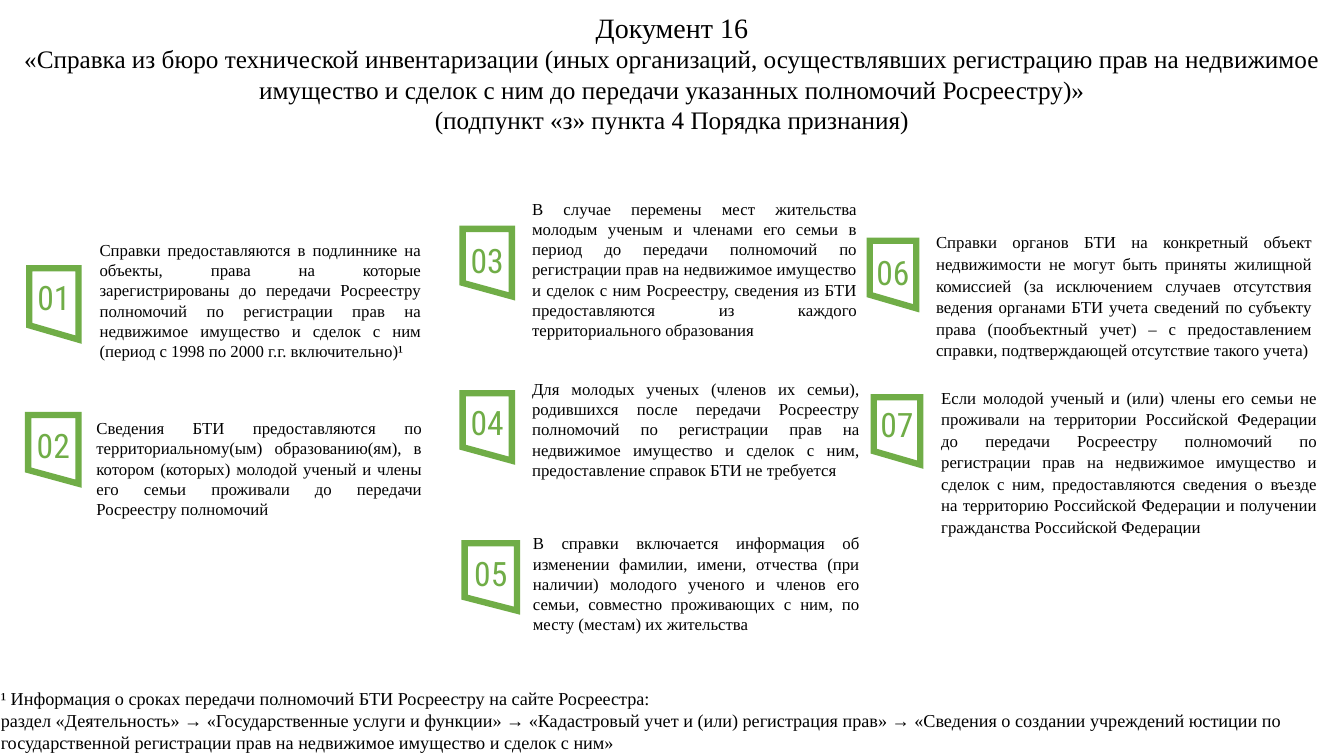
import pptx
import pptx.util
import pptx.dml.color
import pptx.enum.shapes
import pptx.enum.text
from dataclasses import dataclass
from lxml import etree

Cm = pptx.util.Cm
Pt = pptx.util.Pt
Align = pptx.enum.text.PP_ALIGN
Shape = pptx.enum.shapes.MSO_SHAPE


@dataclass(frozen=True)
class Theme:
    ink: str = "000000"
    green: str = "70AD47"
    paper: str = "FFFFFF"
    serif: str = "Times New Roman"
    digit: str = "Roboto Condensed"
    head: int = 20
    sub: int = 18
    body: int = 12
    note: int = 13
    mark: int = 24
    edge: float = 4.5


THEME = Theme()

ITEMS = [
    ("01", (0.74, 6.76, 1.24, 1.8), 0.1, (2.26, 5.92, 8.61, 3.56), True,
     "Справки предоставляются в подлиннике на объекты, права на которые зарегистрированы до передачи Росреестру полномочий по регистрации прав на недвижимое имущество и сделок с ним (период с 1998 по 2000 г.г. включительно)¹"),
    ("02", (0.71, 10.46, 1.27, 1.73), 0.13, (2.18, 10.41, 8.71, 2.82), True,
     "Сведения БТИ предоставляются по территориальному(ым) образованию(ям), в котором (которых) молодой ученый и члены его семьи проживали до передачи Росреестру полномочий"),
    ("03", (11.66, 5.77, 1.24, 1.7), 0.15, (13.16, 4.88, 8.69, 3.84), True,
     "В случае перемены мест жительства молодым ученым и членами его семьи в период до передачи полномочий по регистрации прав на недвижимое имущество и сделок с ним Росреестру, сведения из БТИ предоставляются из каждого территориального образования"),
    ("04", (11.66, 9.91, 1.24, 1.7), 0.1, (13.16, 9.42, 8.76, 2.82), True,
     "Для молодых ученых (членов их семьи), родившихся после передачи Росреестру полномочий по регистрации прав на недвижимое имущество и сделок с ним, предоставление справок БТИ не требуется"),
    ("05", (11.71, 13.69, 1.32, 1.7), 0.13, (13.18, 13.31, 8.74, 2.82), True,
     "В справки включается информация об изменении фамилии, имени, отчества (при наличии) молодого ученого и членов его семьи, совместно проживающих с ним, по месту (местам) их жительства"),
    ("06", (21.92, 6.07, 1.17, 1.7), 0.15, (23.34, 5.69, 9.98, 3.56), False,
     "Справки органов БТИ на конкретный объект недвижимости не могут быть приняты жилищной комиссией (за исключением случаев отсутствия ведения органами БТИ учета сведений по субъекту права (пообъектный учет) – с предоставлением справки, подтверждающей отсутствие такого учета)"),
    ("07", (22.02, 10.01, 1.17, 1.7), 0.05, (23.47, 9.6, 9.98, 4.09), False,
     "Если молодой ученый и (или) члены его семьи не проживали на территории Российской Федерации до передачи Росреестру полномочий по регистрации прав на недвижимое имущество и сделок с ним, предоставляются сведения о въезде на территорию Российской Федерации и получении гражданства Российской Федерации"),
]


def color(code):
    return pptx.dml.color.RGBColor.from_string(code)


def frame(shape):
    area = shape.text_frame
    area.word_wrap = True
    area.vertical_anchor = pptx.enum.text.MSO_ANCHOR.TOP
    return area


def write(area, text, size=THEME.body, font=THEME.serif, ink=THEME.ink,
          align=Align.LEFT, lead=None, after=None):
    first = area.paragraphs[0]
    para = area.add_paragraph() if first.runs else first
    para.alignment = align
    para.line_spacing = lead
    para.space_after = after
    run = para.add_run()
    run.text = text
    run.font.size = Pt(size)
    run.font.name = font
    run.font.color.rgb = color(ink)


def label(shapes, box):
    return frame(shapes.add_textbox(*map(Cm, box)))


def panel(shapes, box):
    shape = shapes.add_shape(Shape.RECTANGLE, *map(Cm, box))
    shape.shadow.inherit = False
    shape.fill.solid()
    shape.fill.fore_color.rgb = color(THEME.paper)
    shape.line.fill.background()
    return frame(shape)


def badge(shapes, num, box, drop):
    shape = shapes.add_shape(Shape.FLOWCHART_MANUAL_INPUT, *map(Cm, box))
    shape.shadow.inherit = False
    shape.fill.background()
    shape.line.color.rgb = color(THEME.green)
    shape.line.width = Pt(THEME.edge)
    props = shape.element.spPr
    props.xfrm.set("flipV", "1")
    miter = etree.SubElement(props.ln, pptx.oxml.ns.qn("a:miter"))
    miter.set("lim", "800000")
    left, top, width, _ = box
    wide = 1.5
    area = label(shapes, (left + (width - wide) / 2, top + drop, wide, 1.27))
    write(area, num, size=THEME.mark, font=THEME.digit, ink=THEME.green,
          align=Align.CENTER)


def item(slide, num, mark, drop, box, solid, text):
    shapes = slide.shapes.add_group_shape().shapes
    if solid:
        write(panel(shapes, box), text, align=Align.JUSTIFY)
    else:
        write(label(shapes, box), text, align=Align.JUSTIFY,
              lead=1.07, after=Pt(6))
    badge(shapes, num, mark, drop)


def title(slide):
    area = label(slide.shapes, (0, 0.13, 33.87, 3.43))
    write(area, "Документ 16", size=THEME.head, align=Align.CENTER)
    for text in (
        "«Справка из бюро технической инвентаризации (иных организаций, осуществлявших регистрацию прав на недвижимое имущество и сделок с ним до передачи указанных полномочий Росреестру)»",
        "(подпункт «з» пункта 4 Порядка признания)",
    ):
        write(area, text, size=THEME.sub, align=Align.CENTER)


def note(slide):
    area = label(slide.shapes, (-0.23, 17.2, 33.66, 1.93))
    for text in (
        "¹ Информация о сроках передачи полномочий БТИ Росреестру на сайте Росреестра:",
        "раздел «Деятельность» → «Государственные услуги и функции» → «Кадастровый учет и (или) регистрация прав» → «Сведения о создании учреждений юстиции по государственной регистрации прав на недвижимое имущество и сделок с ним»",
    ):
        write(area, text, size=THEME.note)


def main():
    deck = pptx.Presentation()
    deck.slide_width = Cm(33.87)
    deck.slide_height = Cm(19.05)
    slide = deck.slides.add_slide(deck.slide_layouts[6])
    title(slide)
    for entry in ITEMS:
        item(slide, *entry)
    note(slide)
    deck.save("out.pptx")


if __name__ == "__main__":
    main()
